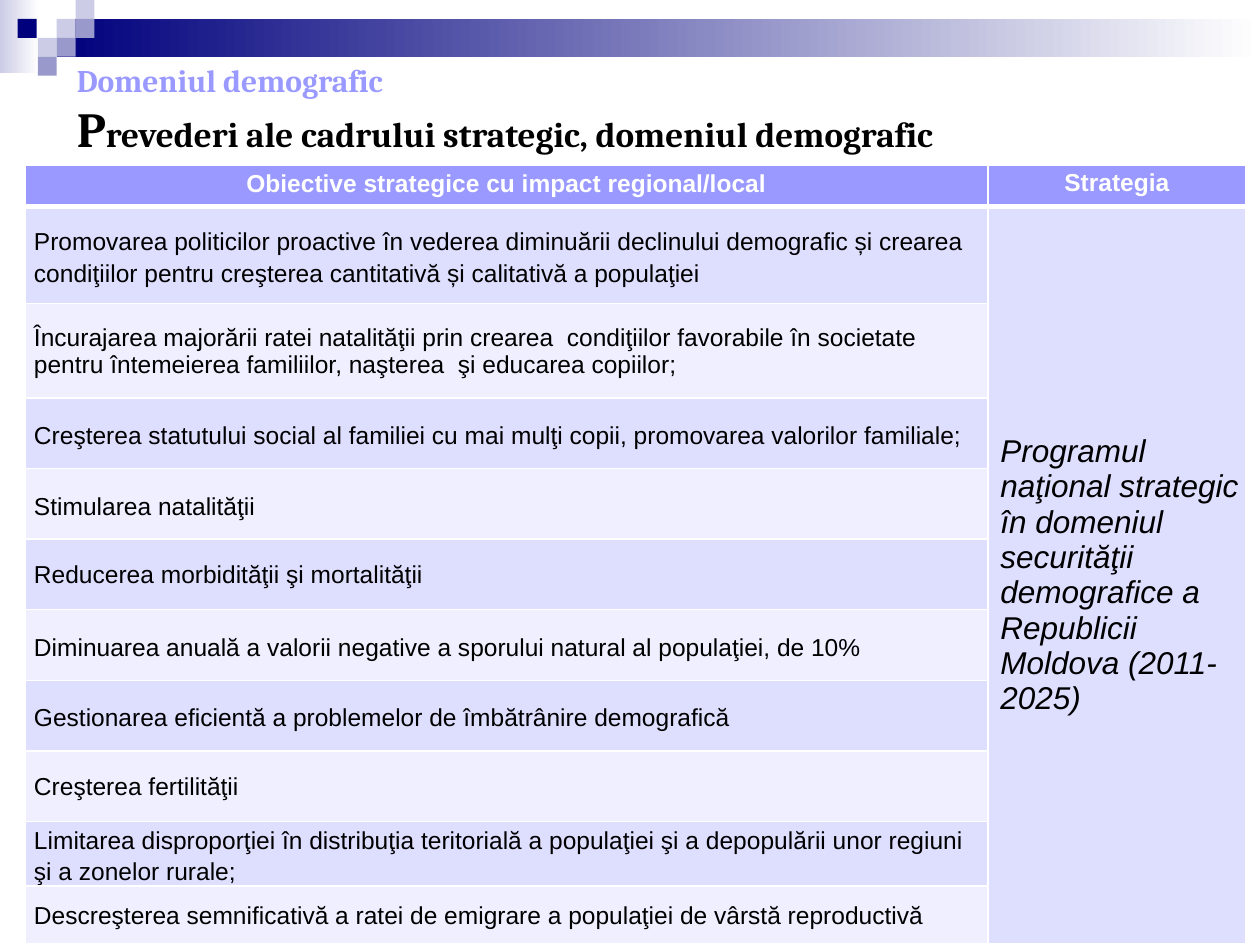
from dataclasses import dataclass

from lxml.etree import SubElement
from pptx import Presentation
from pptx.dml.color import RGBColor
from pptx.enum.shapes import MSO_SHAPE as Preset
from pptx.enum.text import MSO_ANCHOR as Anchor, MSO_AUTO_SIZE as AutoSize, PP_ALIGN as Align
from pptx.oxml.ns import qn
from pptx.util import Inches, Pt


@dataclass(frozen=True)
class Theme:
    navy: str = "00007D"
    pale: str = "CCCCE6"
    mid: str = "9999CC"
    accent: str = "9999FF"
    band_dark: str = "DEDEFF"
    band_light: str = "EFEFFF"
    white: str = "FFFFFF"
    black: str = "000000"
    title_font: str = "Cambria"
    body_font: str = "Arial"
    initial: int = 28
    heading: int = 20
    large: int = 18
    body: int = 14


THEME = Theme()
SQUARE = 0.15
TEXT_MARGINS = (0.07, 0.01, 0.07, 0)
NO_MARGINS = (0, 0, 0, 0)

SQUARES = [
    (0.45, 0.15, THEME.pale),
    (0.6, 0, THEME.pale),
    (0.6, 0.15, THEME.mid),
    (0.3, 0.3, THEME.pale),
    (0.14, 0.15, THEME.navy),
    (0.45, 0.3, THEME.mid),
    (0.3, 0.45, THEME.mid),
]

TITLE_SPANS = [
    ("Domeniul demografic ", THEME.large, THEME.accent),
    ("P", THEME.initial, THEME.black),
    ("revederi ale cadrului strategic, domeniul demografic", THEME.heading, THEME.black),
]

HEADERS = [
    ("Obiective strategice cu impact regional/local", TEXT_MARGINS),
    ("Strategia", NO_MARGINS),
]
STRATEGY = ("Programul naţional strategic în domeniul securităţii demografice "
            "a Republicii Moldova (2011-2025)")

# Objective, row height, line spacing, alignment
OBJECTIVES = [
    ("Promovarea politicilor proactive în vederea diminuării declinului demografic și "
     "crearea condiţiilor pentru creşterea cantitativă și calitativă a populaţiei",
     0.77, 1.15, Align.LEFT),
    ("Încurajarea majorării ratei natalităţii prin crearea  condiţiilor favorabile în "
     "societate pentru întemeierea familiilor, naşterea  şi educarea copiilor;",
     0.75, 1, Align.LEFT),
    ("Creşterea statutului social al familiei cu mai mulţi copii, promovarea valorilor "
     "familiale;", 0.56, 1.15, Align.LEFT),
    ("Stimularea natalităţii", 0.56, 1.15, Align.LEFT),
    ("Reducerea morbidităţii şi mortalităţii", 0.56, 1, Align.LEFT),
    ("Diminuarea anuală a valorii negative a sporului natural al populaţiei, de 10% ",
     0.56, 1.15, Align.JUSTIFY),
    ("Gestionarea eficientă a problemelor de îmbătrânire demografică",
     0.56, 1.15, Align.JUSTIFY),
    ("Creşterea fertilităţii", 0.56, 1, Align.LEFT),
    ("Limitarea disproporţiei în distribuţia teritorială a populaţiei şi a depopulării "
     "unor regiuni şi a zonelor rurale;", 0.5, 1.15, Align.LEFT),
    ("Descreşterea semnificativă a ratei de emigrare a populaţiei de vârstă reproductivă",
     0.46, 1, Align.LEFT),
]


def rgb(color):
    return RGBColor.from_string(color)


def style_font(font, name, size, color, bold=False, italic=False):
    font.name, font.size, font.bold, font.italic = name, Pt(size), bold, italic
    font.color.rgb = rgb(color)


def add_block(slide, left, top, width, height, color, fade_to=None):
    block = slide.shapes.add_shape(
        Preset.RECTANGLE, Inches(left), Inches(top), Inches(width), Inches(height))
    block.shadow.inherit = False
    block.line.fill.background()
    if fade_to is None:
        block.fill.solid()
        block.fill.fore_color.rgb = rgb(color)
        return
    block.fill.gradient()
    block.fill.gradient_angle = 0
    for stop, position, shade in zip(block.fill.gradient_stops, (0, 1), (color, fade_to)):
        stop.position = position
        stop.color.rgb = rgb(shade)


def fill_title(title):
    title.left, title.top = Inches(0.51), Inches(0.34)
    title.width, title.height = Inches(9), Inches(1.05)
    frame = title.text_frame
    frame.auto_size = AutoSize.NONE
    frame.word_wrap = True
    frame.vertical_anchor = Anchor.MIDDLE
    para = frame.paragraphs[0]
    para.alignment = Align.LEFT
    for index, (text, size, color) in enumerate(TITLE_SPANS):
        if index == 1:
            para.add_line_break()
        span = para.add_run()
        span.text = text
        style_font(span.font, THEME.title_font, size, color, bold=True)


def set_borders(cell, top=1, bottom=1):
    properties = cell._tc.get_or_add_tcPr()
    for side, width in (("L", 1), ("R", 1), ("T", top), ("B", bottom)):
        line = SubElement(properties, qn(f"a:ln{side}"), w=str(Pt(width)))
        SubElement(SubElement(line, qn("a:solidFill")), qn("a:srgbClr"), val=THEME.white)


def style_cell(cell, fill, margins, top=1, bottom=1):
    set_borders(cell, top, bottom)
    cell.fill.solid()
    cell.fill.fore_color.rgb = rgb(fill)
    (cell.margin_left, cell.margin_top,
     cell.margin_right, cell.margin_bottom) = map(Inches, margins)


def write_cell(cell, text, align=Align.LEFT, spacing=1, anchor=Anchor.MIDDLE,
               size=THEME.body, color=THEME.black, bold=False, italic=False):
    cell.vertical_anchor = anchor
    cell.text_frame.text = text
    para = cell.text_frame.paragraphs[0]
    para.alignment, para.line_spacing = align, spacing
    style_font(para.runs[0].font, THEME.body_font, size, color, bold, italic)
    return para


def add_objectives_table(slide):
    heights = [0.33] + [height for _, height, _, _ in OBJECTIVES]
    widths = [7.64, 2.05]
    table = slide.shapes.add_table(
        len(heights), len(widths), Inches(0.2), Inches(1.31),
        Inches(sum(widths)), Inches(sum(heights))).table
    for column, width in zip(table.columns, widths):
        column.width = Inches(width)
    for row, height in zip(table.rows, heights):
        row.height = Inches(height)

    # Header row
    for index, (text, margins) in enumerate(HEADERS):
        cell = table.cell(0, index)
        style_cell(cell, THEME.accent, margins, bottom=3)
        write_cell(cell, text, Align.CENTER, 1.15, Anchor.TOP,
                   color=THEME.white, bold=True)

    # Banded objectives
    for row, (text, _, spacing, align) in enumerate(OBJECTIVES, start=1):
        band = THEME.band_dark if row % 2 else THEME.band_light
        top = 3 if row == 1 else 1
        style_cell(table.cell(row, 0), band, TEXT_MARGINS, top)
        write_cell(table.cell(row, 0), text, align, spacing)
        style_cell(table.cell(row, 1), THEME.band_dark, NO_MARGINS, top)

    # Strategy spanning all objectives
    strategy = table.cell(1, 1)
    strategy.merge(table.cell(len(OBJECTIVES), 1))
    para = write_cell(strategy, STRATEGY, size=THEME.large, italic=True)
    para._p.get_or_add_pPr().set("marL", str(Inches(0.1)))


def main():
    deck = Presentation()
    deck.slide_width, deck.slide_height = Inches(10), Inches(7.5)
    slide = deck.slides.add_slide(deck.slide_layouts[5])

    # Header decoration
    add_block(slide, 0, 0, 0.31, 0.58, THEME.pale, THEME.white)
    add_block(slide, 0.45, 0.15, 9.55, 0.3, THEME.navy, THEME.white)
    for left, top, color in SQUARES:
        add_block(slide, left, top, SQUARE, SQUARE, color)

    # Content
    fill_title(slide.shapes.title)
    add_objectives_table(slide)
    deck.save("out.pptx")


if __name__ == "__main__":
    main()
